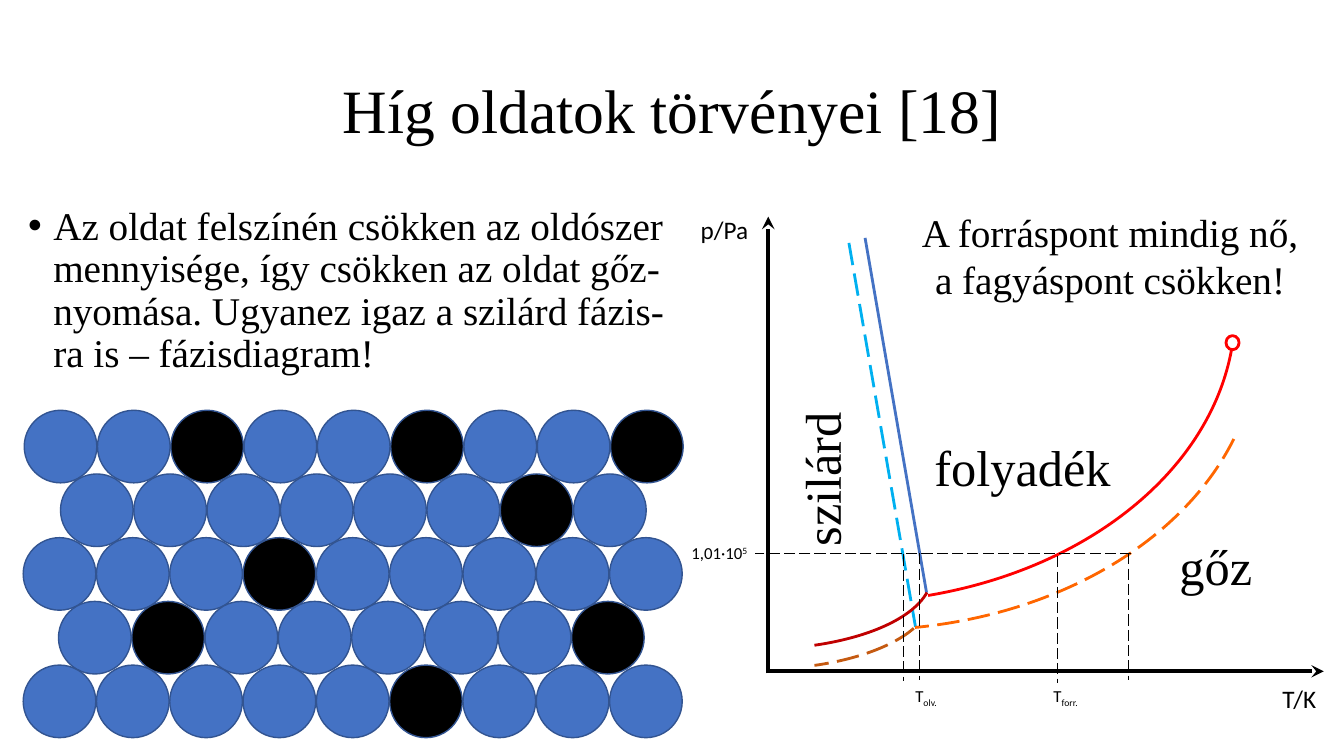
from pptx import Presentation
from pptx.dml.color import RGBColor
from pptx.enum.dml import MSO_LINE as Dash
from pptx.enum.shapes import MSO_CONNECTOR as Conn, MSO_SHAPE as Kind
from pptx.enum.text import MSO_ANCHOR as Anchor, PP_ALIGN as Align
from pptx.oxml.ns import qn
from pptx.util import Inches, Pt
from lxml.etree import SubElement

HEX = {
    "black": "000000", "blue": "4472C4", "rim": "325491", "sky": "00B0F0",
    "red": "FF0000", "dark": "C00000", "orange": "FF6600", "brown": "C55A11",
}
SERIF, SANS = "Times New Roman", "Calibri"


def color(name):
    return RGBColor.from_string(HEX[name])


def stroke(line, name, width, dash=False):
    line.color.rgb = color(name)
    line.width = Pt(width)
    if dash:
        line.dash_style = Dash.LONG_DASH


def add_text(slide, box, text, size, font=SERIF, align=Align.LEFT,
             wrap=False, base=None):
    """Place one paragraph; base = (small text, offset in percent)."""
    shape = slide.shapes.add_textbox(*map(Inches, box))
    frame = shape.text_frame
    frame.word_wrap = wrap
    para = frame.paragraphs[0]
    para.text = text
    para.alignment = align
    if base:
        small = para.add_run()
        small.text = base[0]
        small.font._element.set("baseline", str(base[1] * 1000))
    for run in para.runs:
        run.font.size = Pt(size)
        run.font.name = font
        run.font.color.rgb = color("black")
    return shape


def add_line(slide, start, end, name, width, dash=False, arrow=False):
    line = slide.shapes.add_connector(
        Conn.STRAIGHT, *map(Inches, start + end))
    stroke(line.line, name, width, dash)
    props = line._element.spPr
    if arrow:
        SubElement(line.line._get_or_add_ln(), qn("a:tailEnd"), type="stealth")
    SubElement(props, qn("a:effectLst"))


def add_shape(slide, kind, box, name, width, fill=None, dash=False):
    shape = slide.shapes.add_shape(kind, *map(Inches, box))
    shape.shadow.inherit = False
    if fill:
        shape.fill.solid()
        shape.fill.fore_color.rgb = color(fill)
    else:
        shape.fill.background()
    stroke(shape.line, name, width, dash)
    return shape


def add_title(slide, box):
    title = add_text(slide, box, "Híg oldatok törvényei [18]", 44,
                     align=Align.CENTER, wrap=True)
    title.text_frame.vertical_anchor = Anchor.MIDDLE
    title.text_frame.paragraphs[0].line_spacing = 0.9


def add_body(slide, box):
    body = add_text(
        slide, box,
        "Az oldat felszínén csökken az oldószer mennyisége, így csökken az "
        "oldat gőz-nyomása. Ugyanez igaz a szilárd fázis-ra is – "
        "fázisdiagram!", 28, wrap=True)
    para = body.text_frame.paragraphs[0]
    para.line_spacing = 0.9
    para.space_before = Pt(10)
    props = para._p.get_or_add_pPr()
    props.set("marL", str(Inches(0.25)))
    props.set("indent", str(-Inches(0.25)))
    SubElement(props, qn("a:buFont"), typeface="Arial")
    SubElement(props, qn("a:buChar"), char="•")


def add_balls(slide, left, top):
    """Packed layers: solvent in blue, solute in black."""
    size, step, rise = 0.72, 0.727, 0.632
    # shift, count, black places
    rows = [(0.01, 9, {2, 5, 8}), (0.37, 8, {6}), (0, 9, {3}),
            (0.35, 8, {1, 7}), (0, 9, {5})]
    for row, (shift, count, solute) in enumerate(rows):
        for col in range(count):
            box = (left + shift + col * step, top + row * rise, size, size)
            fill = "black" if col in solute else "blue"
            add_shape(slide, Kind.OVAL, box, "rim", 1, fill)


def add_chart(slide, left, top):
    """Phase diagram; left and top give the upper end of the p axis."""
    def at(x, y):
        return left + x, top + y

    # Axes
    add_line(slide, at(0, 4.53), at(0, 0), "black", 3, arrow=True)
    add_line(slide, at(0, 4.51), at(5.51, 4.51), "black", 3, arrow=True)

    # Melting lines: solvent, solution
    add_line(slide, at(0.96, 0.21), at(1.57, 3.73), "blue", 2)
    add_line(slide, at(0.8, 0.26), at(1.46, 4.07), "sky", 2, dash=True)

    # Vapour curves: place, size, angles, colour, dash
    arcs = [
        (-1.79, 2.83, 3.41, 1.46, 3.481, 31.116, "dark", False),
        (-3.19, -1.97, 7.82, 5.8, 3.395, 43.79, "red", False),
        (-1.79, 3.03, 3.41, 1.46, 7.164, 31.116, "brown", True),
        (-2.96, -1.7, 7.82, 5.8, 9.203, 48.009, "orange", True),
    ]
    for x, y, wide, high, start, end, name, dash in arcs:
        arc = add_shape(slide, Kind.ARC, at(x, y) + (wide, high), name, 2,
                        dash=dash)
        arc.adjustments[0] = start
        arc.adjustments[1] = end
    add_shape(slide, Kind.OVAL, at(4.54, 1.18) + (0.13, 0.14), "red", 2)

    # Guides at normal pressure
    add_line(slide, at(3.6, 3.34), at(-0.13, 3.34), "black", 1, dash=True)
    for x, y in [(1.34, 3.35), (1.5, 3.34), (2.87, 3.37), (3.57, 3.34)]:
        add_line(slide, at(x, y), at(x, y + 1.26), "black", 1, dash=True)

    # Axis labels
    add_text(slide, at(-0.77, -0.07) + (0.68, 0.4), "p/Pa", 18, SANS)
    add_text(slide, at(5, 4.58) + (0.54, 0.4), "T/K", 18, SANS)
    add_text(slide, at(-0.86, 3.19) + (0.77, 0.3), "1,01·10", 12, SANS,
             wrap=True, base=("5", 30))
    for x, wide, sub in [(1.36, 0.43, "olv."), (2.73, 0.47, "forr.")]:
        add_text(slide, at(x, 4.6) + (wide, 0.3), "T", 12, SANS,
                 base=(sub, -25))

    # Phase names
    for x, y, wide, text, turn in [(3.98, 3.11, 0.93, "gőz", 0),
                                   (1.55, 2.13, 1.97, "folyadék", 0),
                                   (-0.25, 2.24, 1.55, "szilárd", 270)]:
        name = add_text(slide, at(x, y) + (wide, 0.71), text, 36)
        name.rotation = turn

    # Conclusion
    add_text(slide, at(1.4, -0.13) + (3.98, 1.04),
             "A forráspont mindig nő,\va fagyáspont csökken!", 28,
             align=Align.CENTER)


def main():
    deck = Presentation()
    deck.slide_width = Inches(13.33)
    deck.slide_height = Inches(7.5)
    slide = deck.slides.add_slide(deck.slide_layouts[6])
    add_title(slide, (0.92, 0.4, 11.5, 1.45))
    add_body(slide, (0.18, 2, 6.61, 1.95))
    add_chart(slide, 7.62, 2.15)
    add_balls(slide, 0.23, 4.07)
    deck.save("out.pptx")


if __name__ == "__main__":
    main()
